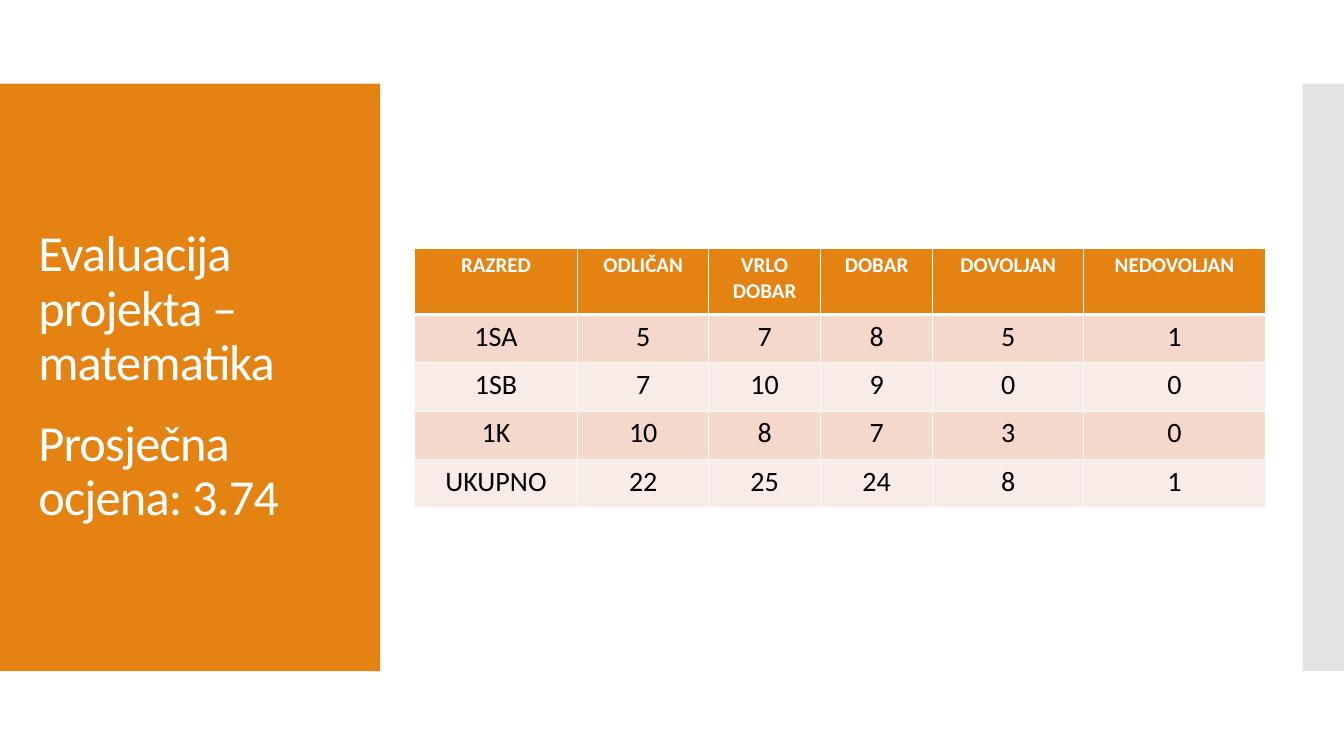
import pptx
import pptx.dml.color
import pptx.enum.shapes
import pptx.enum.text
import pptx.oxml
import pptx.oxml.ns
import pptx.util

Inches = pptx.util.Inches
Pt = pptx.util.Pt

FONT = "Calibri"
COLORS = {
    "orange": "E48312",
    "gray": "C8C8C8",
    "white": "FFFFFF",
    "black": "000000",
    "band_dark": "F4D8CC",
    "band_light": "F9ECE7",
}
TITLE = ["Evaluacija projekta –matematika", "Prosječna ocjena: 3.74"]
GRADES = [
    ["RAZRED", "ODLIČAN", "VRLO DOBAR", "DOBAR", "DOVOLJAN", "NEDOVOLJAN"],
    ["1SA", "5", "7", "8", "5", "1"],
    ["1SB", "7", "10", "9", "0", "0"],
    ["1K", "10", "8", "7", "3", "0"],
    ["UKUPNO", "22", "25", "24", "8", "1"],
]
COL_WIDTHS = [1.62, 1.3, 1.11, 1.11, 1.5, 1.8]
HEADER_HEIGHT = 0.66
ROW_HEIGHT = 0.48


def rgb(name):
    return pptx.dml.color.RGBColor.from_string(COLORS[name])


def style_font(p, size, color, bold=False):
    p.font.name = FONT
    p.font.size = Pt(size)
    p.font.bold = bold
    p.font.color.rgb = rgb(color)


def add_panel(s, left, width, color, opacity=100):
    sp = s.shapes.add_shape(
        pptx.enum.shapes.MSO_SHAPE.RECTANGLE,
        Inches(left), Inches(0.83), Inches(width), Inches(5.83))
    sp.shadow.inherit = False
    sp.line.fill.background()
    sp.fill.solid()
    sp.fill.fore_color.rgb = rgb(color)
    if opacity < 100:
        clr = sp.fill._xPr.find(".//" + pptx.oxml.ns.qn("a:srgbClr"))
        alpha = pptx.oxml.parse_xml(
            f'<a:alpha {pptx.oxml.ns.nsdecls("a")} val="{opacity * 1000}"/>')
        clr.append(alpha)


def set_title(s):
    sp = s.shapes.title
    s.shapes._spTree.append(sp._element)
    sp.left, sp.top = Inches(0.28), Inches(1.23)
    sp.width, sp.height = Inches(3.22), Inches(5.03)
    tf = sp.text_frame
    tf.word_wrap = True
    tf.auto_size = pptx.enum.text.MSO_AUTO_SIZE.NONE
    tf.vertical_anchor = pptx.enum.text.MSO_ANCHOR.MIDDLE
    tf.text = "\n".join(TITLE)
    for i, p in enumerate(tf.paragraphs):
        p.alignment = pptx.enum.text.PP_ALIGN.LEFT
        p.line_spacing = 0.9
        p.space_before = Pt(19 if i else 0)
        style_font(p, 36, "white")
        for r in p.runs:
            r._r.get_or_add_rPr().set("spc", "-60")


def set_borders(cell, widths):
    tc_pr = cell._tc.get_or_add_tcPr()
    for side, width in widths.items():
        tc_pr.append(pptx.oxml.parse_xml(
            f'<a:ln{side} {pptx.oxml.ns.nsdecls("a")} w="{Pt(width)}">'
            f'<a:solidFill><a:srgbClr val="{COLORS["white"]}"/></a:solidFill>'
            f'</a:ln{side}>'))


def fill_cell(cell, text, row):
    thin, thick = 0.96, 3
    set_borders(cell, {
        "L": thin,
        "R": thin,
        "T": thick if row == 1 else thin,
        "B": thick if row == 0 else thin,
    })
    band = "band_dark" if row % 2 else "band_light"
    cell.fill.solid()
    cell.fill.fore_color.rgb = rgb(band if row else "orange")
    cell.margin_left = cell.margin_right = Inches(0.11)
    cell.margin_top = cell.margin_bottom = Inches(0.05)
    cell.text = text
    p = cell.text_frame.paragraphs[0]
    p.alignment = pptx.enum.text.PP_ALIGN.CENTER
    if row:
        style_font(p, 20, "black")
    else:
        style_font(p, 15, "white", bold=True)


def add_grades_table(s):
    heights = [HEADER_HEIGHT] + [ROW_HEIGHT] * (len(GRADES) - 1)
    table = s.shapes.add_table(
        len(GRADES), len(COL_WIDTHS), Inches(4.11), Inches(2.46),
        Inches(sum(COL_WIDTHS)), Inches(sum(heights))).table
    for col, width in zip(table.columns, COL_WIDTHS):
        col.width = Inches(width)
    for row, height in zip(table.rows, heights):
        row.height = Inches(height)
    for i, values in enumerate(GRADES):
        for j, text in enumerate(values):
            fill_cell(table.cell(i, j), text, i)


def main():
    prs = pptx.Presentation()
    prs.slide_width, prs.slide_height = Inches(13.33), Inches(7.5)
    s = prs.slides.add_slide(prs.slide_layouts.get_by_name("Title Only"))
    add_panel(s, 0, 3.77, "orange")
    add_panel(s, 12.92, 0.41, "gray", opacity=50)
    set_title(s)
    add_grades_table(s)
    prs.save("out.pptx")


if __name__ == "__main__":
    main()
